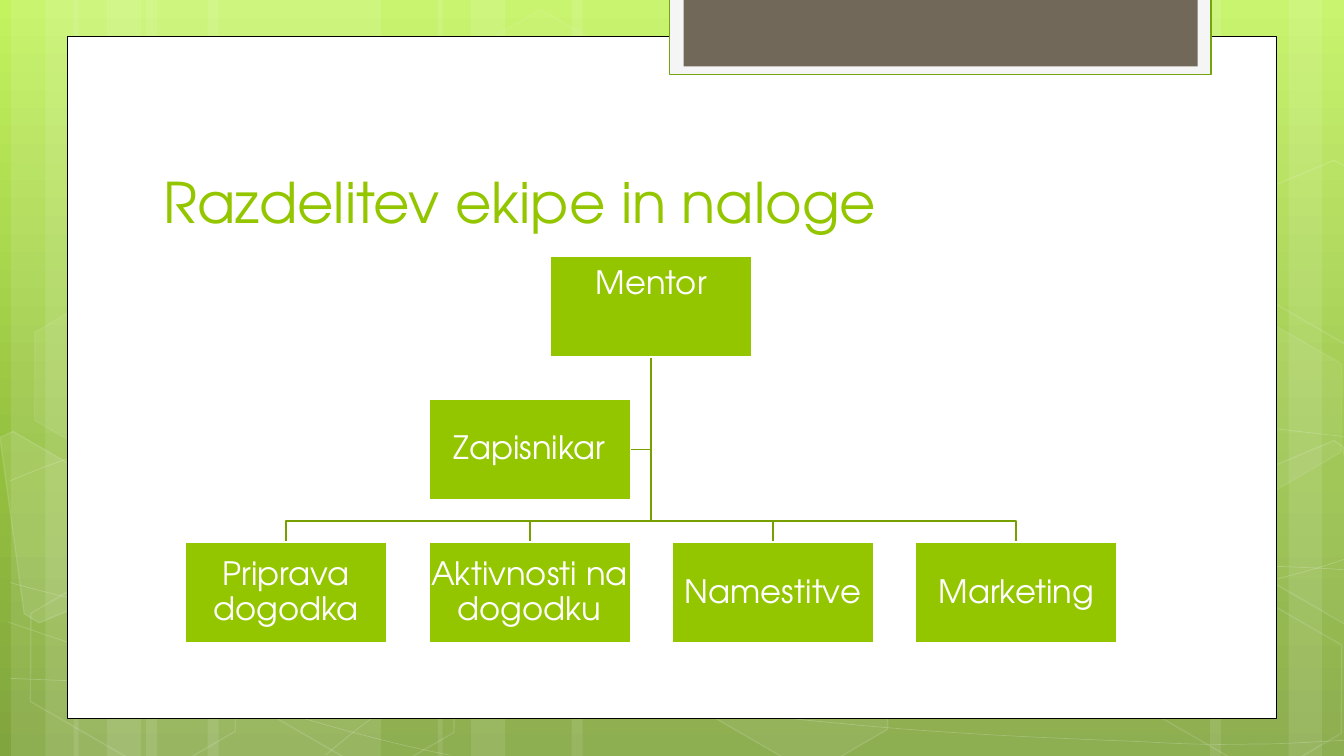
from dataclasses import dataclass
from typing import NamedTuple

from lxml.etree import SubElement
from pptx import Presentation
from pptx.dml.color import RGBColor
from pptx.enum.shapes import MSO_SHAPE as Kind
from pptx.enum.text import MSO_ANCHOR as Anchor, MSO_AUTO_SIZE as Fit, PP_ALIGN as Align
from pptx.oxml.ns import qn
from pptx.util import Inches, Pt


class Box(NamedTuple):
    x: float
    y: float
    w: float
    h: float


@dataclass(frozen=True)
class Theme:
    font: str = "TeX Gyre Adventor"
    green: str = "94C600"
    title: str = "94C600"
    link: str = "779F00"
    tab: str = "74A510"
    pale: str = "F5F5F5"
    brown: str = "71685A"
    white: str = "FFFFFF"
    black: str = "000000"
    back: tuple = ((0, "C3F35F"), (62, "93BF3F"), (100, "81A53E"))
    head: int = 40
    label: int = 23


LOOK = Theme()
PAGE = Box(0, 0, 13.33, 7.5)

# Left edge and width of each full-height stripe
BANDS = ((1.45, 2.33), (0.11, 0.67), (0.45, 1.11), (2.06, 2.33), (0.73, 0.67), (1.06, 1.11),
         (9.78, 2.33), (12.78, 0.67), (12, 1.11), (5.67, 4.11), (4.34, 0.67), (4.67, 1.11))

# Start point, then Bezier pieces: two handles and an end point each
CURVES = (
    ((0.1, 6.73), (0.82, 6.76, 1.54, 6.79, 2.54, 6.78), (3.54, 6.77, 4.77, 6.75, 6.1, 6.65),
     (7.44, 6.55, 9.33, 6.36, 10.55, 6.17), (11.78, 5.98, 13.03, 5.68, 13.43, 5.51)),
    ((0.1, 4.77), (0.48, 4.61, 0.86, 4.46, 1.62, 4.31), (2.38, 4.16, 3.45, 3.94, 4.63, 3.87),
     (5.82, 3.8, 7.25, 3.79, 8.72, 3.87), (10.19, 3.95, 12.63, 4.26, 13.43, 4.34)),
    ((0.08, 6.17), (1.69, 6.72, 3.3, 7.27, 4.46, 7.49)),
    ((0.1, 5.78), (0.51, 5.89, 0.93, 6, 1.71, 6.16), (2.48, 6.31, 3.64, 6.56, 4.75, 6.73),
     (5.86, 6.9, 7.27, 7.08, 8.37, 7.18), (9.48, 7.29, 10.66, 7.33, 11.37, 7.36),
     (12.07, 7.4, 12.25, 7.38, 12.6, 7.38), (12.94, 7.37, 13.19, 7.35, 13.43, 7.34)),
    ((3.23, 7.49), (3.47, 7.29, 3.7, 7.09, 4.03, 6.91), (4.35, 6.73, 4.8, 6.53, 5.17, 6.39),
     (5.54, 6.25, 5.77, 6.19, 6.26, 6.09), (6.75, 5.99, 7.65, 5.85, 8.11, 5.78),
     (8.58, 5.71, 8.65, 5.71, 9.07, 5.69), (9.48, 5.66, 10.13, 5.63, 10.59, 5.62),
     (11.05, 5.61, 11.82, 5.62, 11.82, 5.62), (11.82, 5.62, 12.7, 5.62, 12.7, 5.62),
     (12.95, 5.63, 13.17, 5.64, 13.29, 5.65), (13.41, 5.66, 13.37, 5.65, 13.41, 5.66)),
)

# Left, top, fill opacity, line opacity
HEXES = ((4.45, 0.36, 4, 8), (6.62, 5.89, 6, 12), (0.15, 5.91, 0, 12), (0.19, 3.12, 7, 8),
         (2.32, 5.92, 0, 12), (11.12, 5.93, 0, 12), (11.12, 3.14, 7, 8))

# Fill opacity and corners of the hexagons cut by the slide's edge
SHARDS = (
    (10, ((0, 4.34), (0.13, 4.28), (1.15, 4.87), (1.27, 5.81), (0.39, 6.18), (0.24, 6.09))),
    (4, ((12.35, 4.74), (13.23, 4.37), (13.32, 4.43), (13.57, 6.25), (13.49, 6.28), (12.47, 5.69))),
    (0, ((12.35, 1.96), (13.23, 1.59), (13.34, 1.65), (13.57, 3.46), (13.49, 3.5), (12.47, 2.91))),
)

TEAMS = ("Priprava dogodka", "Aktivnosti na dogodku", "Namestitve", "Marketing")


def tint(fill, color, alpha=100):
    fill.solid()
    fill.fore_color.rgb = RGBColor.from_string(color)
    if alpha < 100:
        node = fill._xPr.find(".//" + qn("a:srgbClr"))
        SubElement(node, qn("a:alpha")).set("val", str(alpha * 1000))


def paint(shape, fill=None, line=None, width=1, alpha=100, edge=100):
    """Set fill and line; alpha and edge are their opacities in percent."""
    shape.shadow.inherit = False
    if fill and alpha:
        tint(shape.fill, fill, alpha)
    else:
        shape.fill.background()
    if line:
        shape.line.width = Pt(width)
        tint(shape.line.fill, line, edge)
    else:
        shape.line.fill.background()
    return shape


def block(slide, box, kind=Kind.RECTANGLE, **style):
    return paint(slide.shapes.add_shape(kind, *map(Inches, box)), **style)


def trace(slide, points, close=False, **style):
    dots = [(Inches(x), Inches(y)) for x, y in points]
    pen = slide.shapes.build_freeform(*dots[0])
    pen.add_line_segments(dots[1:], close=close)
    return paint(pen.convert_to_shape(), **style)


def bend(slide, start, *parts, **style):
    """Trace handles and ends as corners, then join each three into a Bezier piece."""
    points = [start] + [part[n:n + 2] for part in parts for n in (0, 2, 4)]
    shape = trace(slide, points, **style)
    route = shape._element.find(".//" + qn("a:path"))
    legs = route.findall(qn("a:lnTo"))
    for n in range(0, len(legs), 3):
        piece = SubElement(route, qn("a:cubicBezTo"))
        for leg in legs[n:n + 3]:
            piece.append(leg[0])
            route.remove(leg)


def write(shape, text, size, color, align=Align.CENTER, anchor=Anchor.MIDDLE,
          inset=0.02, top=None, lead=1.0, after=0):
    frame = shape.text_frame
    frame.word_wrap = True
    frame.auto_size = Fit.NONE
    frame.vertical_anchor = anchor
    frame.margin_left = frame.margin_right = frame.margin_bottom = Inches(inset)
    frame.margin_top = Inches(inset if top is None else top)
    para = frame.paragraphs[0]
    para.alignment, para.line_spacing, para.space_after = align, lead, Pt(after)
    run = para.add_run()
    run.text = text
    run.font.name, run.font.size = LOOK.font, Pt(size)
    run.font.color.rgb = RGBColor.from_string(color)


def backdrop(slide, box):
    slide.background.fill.gradient()
    grad = slide._element.find(".//" + qn("a:gradFill"))
    stops = grad.find(qn("a:gsLst"))
    for old in list(stops):
        stops.remove(old)
    for pos, color in LOOK.back:
        stop = SubElement(stops, qn("a:gs"), pos=str(pos * 1000))
        SubElement(stop, qn("a:srgbClr"), val=color)
    grad.find(qn("a:lin")).set("ang", "5400000")

    for x, w in BANDS:
        block(slide, Box(box.x + x, box.y, w, box.h), fill=LOOK.white, alpha=10)
    for curve in CURVES:
        bend(slide, *curve, line=LOOK.white, width=0.5, edge=20)
    for x, y, alpha, edge in HEXES:
        cell = block(slide, Box(box.x + x, box.y + y, 2.34, 1.52), Kind.HEXAGON,
                     fill=LOOK.white, alpha=alpha, line=LOOK.white, edge=edge)
        cell.adjustments[0] = 0.285
        cell.rotation = 30
    for alpha, points in SHARDS:
        trace(slide, points, close=True, fill=LOOK.white, alpha=alpha, line=LOOK.white, edge=12)


def panel(slide, box):
    """Draw the white sheet and the tab that hangs over its top edge."""
    block(slide, box, fill=LOOK.white, line=LOOK.black, width=0.5)
    tab = Box(box.x + 5.97, -0.02, 5.37, 0.76)
    block(slide, tab, fill=LOOK.pale, line=LOOK.tab, width=1.25)
    block(slide, Box(tab.x + 0.14, tab.y, 5.1, 0.68), fill=LOOK.brown)


def settle(slide):
    """Move the decoration drawn so far to the slide's layout."""
    base = slide.slide_layout.shapes._spTree
    for shape in list(slide.shapes):
        if not shape.is_placeholder:
            base.append(shape._element)


def heading(slide, box, text):
    title = slide.shapes.title
    title.left, title.top, title.width, title.height = map(Inches, box)
    write(title, text, LOOK.head, LOOK.title, align=Align.LEFT, anchor=Anchor.BOTTOM, inset=0.1, top=0.05)
    title.text_frame.margin_bottom = Inches(0.04)


def chart(slide, box):
    """Place the team tree on a grid of four columns and three rows."""
    wide, high = 2, 1
    across, down = (box.w - wide) / 3, (box.h - high) / 2

    def cell(col, row):
        return Box(box.x + col * across, box.y + row * down, wide, high)

    def node(spot, text, **style):
        shape = block(slide, spot, fill=LOOK.green, line=LOOK.white, width=1.25)
        write(shape, text, LOOK.label, LOOK.white, lead=0.9, after=8, **style)

    lead, aide = cell(1.5, 0), cell(1, 1)
    teams = [cell(col, 2) for col in range(len(TEAMS))]
    stem, foot = lead.x + wide / 2, lead.y + high
    level, rail = aide.y + high / 2, teams[0].y - 0.21
    routes = [[(stem, foot), (stem, level), (aide.x + wide, level)]]
    for spot in reversed(teams):
        mid = spot.x + wide / 2
        routes.append([(stem, foot), (stem, rail), (mid, rail), (mid, spot.y)])
    for route in routes:
        trace(slide, route, line=LOOK.link, width=1.25)

    node(lead, "Mentor", anchor=Anchor.TOP, top=0.11)
    for spot, text in zip(teams, TEAMS):
        node(spot, text)
    node(aide, "Zapisnikar")


def main():
    deck = Presentation()
    deck.slide_width, deck.slide_height = Inches(PAGE.w), Inches(PAGE.h)
    slide = deck.slides.add_slide(deck.slide_layouts[5])
    backdrop(slide, PAGE)
    panel(slide, Box(0.67, 0.36, 11.99, 6.77))
    settle(slide)
    heading(slide, Box(1.52, 1.12, 10.24, 1.25), "Razdelitev ekipe in naloge")
    chart(slide, Box(1.84, 2.54, 9.24, 3.84))
    deck.save("out.pptx")


if __name__ == "__main__":
    main()
